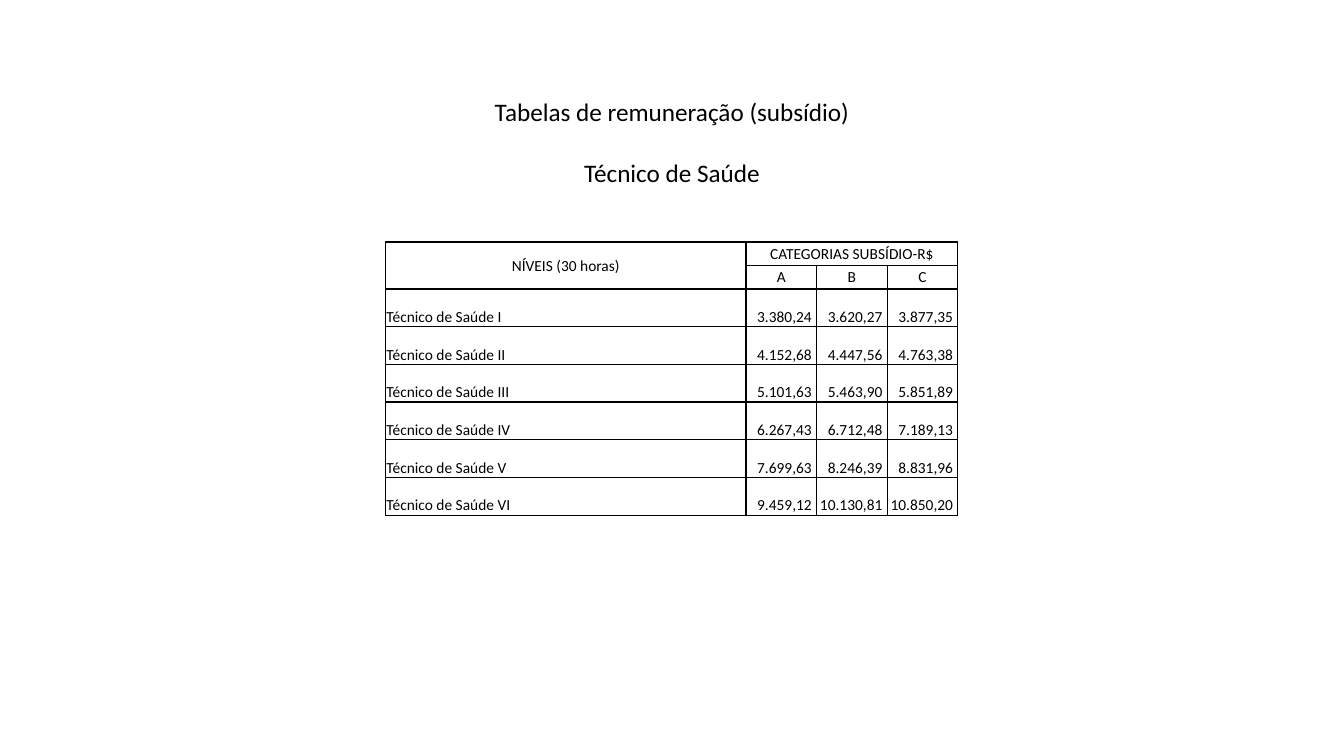
from dataclasses import dataclass

from lxml.etree import SubElement
from pptx import Presentation
from pptx.dml.color import RGBColor
from pptx.enum.text import MSO_ANCHOR as Anchor, PP_ALIGN as Align
from pptx.oxml.ns import qn
from pptx.util import Cm, Pt


@dataclass(frozen=True)
class Theme:
    font: str = "Calibri"
    ink: str = "000000"
    title_size: int = 18
    table_size: int = 11
    border: int = 1


theme = Theme()


def add_run(paragraph, text, size, align):
    paragraph.alignment = align
    run = paragraph.add_run()
    run.text = text
    run.font.name = theme.font
    run.font.size = Pt(size)
    run.font.color.rgb = RGBColor.from_string(theme.ink)


def add_borders(cell):
    properties = cell._tc.get_or_add_tcPr()
    for side in ("a:lnL", "a:lnR", "a:lnT", "a:lnB"):
        line = SubElement(properties, qn(side), w=str(Pt(theme.border)))
        fill = SubElement(line, qn("a:solidFill"))
        SubElement(fill, qn("a:srgbClr"), val=theme.ink)


deck = Presentation()
deck.slide_width, deck.slide_height = Cm(33.87), Cm(19.05)
slide = deck.slides.add_slide(deck.slide_layouts[6])

# Heading
heading = slide.shapes.add_textbox(Cm(5.05), Cm(2.31), Cm(23.77), Cm(2.57)).text_frame
heading.word_wrap = True
add_run(heading.paragraphs[0], "Tabelas de remuneração (subsídio)", theme.title_size, Align.CENTER)
career = heading.add_paragraph()
career.space_before = Pt(22)
add_run(career, "Técnico de Saúde", theme.title_size, Align.CENTER)

# Pay by level and category
header_rows = [
    ["NÍVEIS (30 horas)", "CATEGORIAS SUBSÍDIO-R$", "", ""],
    ["", "A", "B", "C"],
]
pay_rows = [
    ["Técnico de Saúde I", "3.380,24", "3.620,27", "3.877,35"],
    ["Técnico de Saúde II", "4.152,68", "4.447,56", "4.763,38"],
    ["Técnico de Saúde III", "5.101,63", "5.463,90", "5.851,89"],
    ["Técnico de Saúde IV", "6.267,43", "6.712,48", "7.189,13"],
    ["Técnico de Saúde V", "7.699,63", "8.246,39", "8.831,96"],
    ["Técnico de Saúde VI", "9.459,12", "10.130,81", "10.850,20"],
]
rows = header_rows + pay_rows
column_widths = [9.08, 1.78, 1.78, 1.78]
row_heights = [0.59] * len(header_rows) + [0.95] * len(pay_rows)

pay_table = slide.shapes.add_table(
    len(rows), len(column_widths), Cm(9.72), Cm(6.1),
    Cm(sum(column_widths)), Cm(sum(row_heights)),
).table
pay_table.first_row = pay_table.horz_banding = False
for column, width in zip(pay_table.columns, column_widths):
    column.width = Cm(width)
for row, height in zip(pay_table.rows, row_heights):
    row.height = Cm(height)

pay_table.cell(0, 0).merge(pay_table.cell(1, 0))
pay_table.cell(0, 1).merge(pay_table.cell(0, 3))

for r, texts in enumerate(rows):
    in_header = r < len(header_rows)
    for c, text in enumerate(texts):
        cell = pay_table.cell(r, c)
        is_amount = c > 0 and not in_header
        cell.margin_left = cell.margin_top = Cm(0.02)
        cell.margin_right = Cm(0.12 if is_amount else 0.02)
        cell.margin_bottom = Cm(0)
        cell.vertical_anchor = Anchor.MIDDLE if in_header else Anchor.BOTTOM
        add_borders(cell)
        cell.fill.background()
        if text:
            align = Align.CENTER if in_header else Align.RIGHT if is_amount else Align.LEFT
            add_run(cell.text_frame.paragraphs[0], text, theme.table_size, align)

deck.save("out.pptx")
